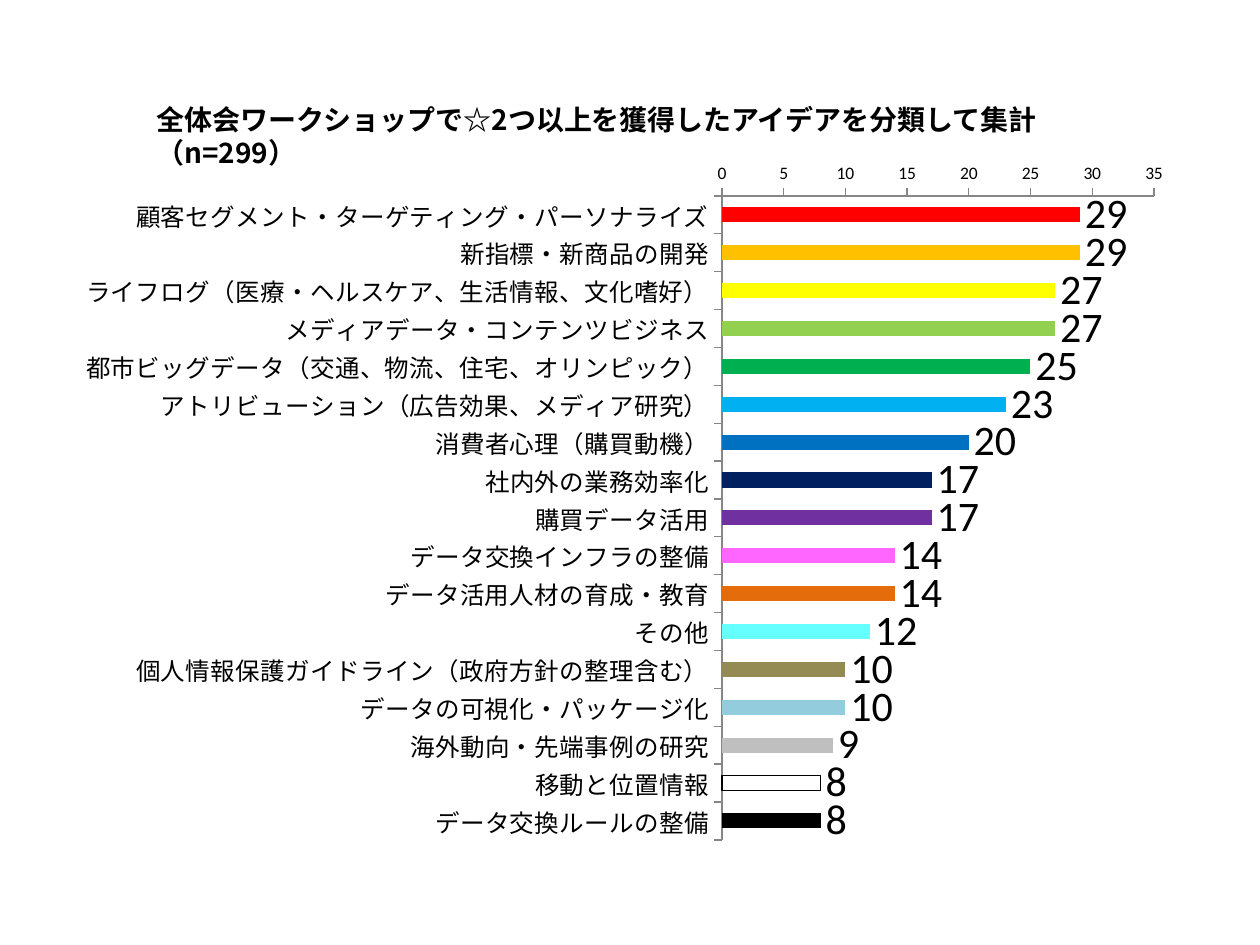
import dataclasses

import lxml.etree
import pptx
import pptx.chart.data
import pptx.dml.color
import pptx.enum.chart
import pptx.enum.text
import pptx.oxml
import pptx.oxml.ns
import pptx.util

RGB = pptx.dml.color.RGBColor
BLACK = RGB(0, 0, 0)
WHITE = RGB(255, 255, 255)
GREY = RGB(0x86, 0x86, 0x86)
RED = RGB(0xFF, 0, 0)
GOLD = RGB(0xFF, 0xC0, 0)
YELLOW = RGB(0xFF, 0xFF, 0)
LIME = RGB(0x92, 0xD0, 0x50)
GREEN = RGB(0, 0xB0, 0x50)
SKY = RGB(0, 0xB0, 0xF0)
BLUE = RGB(0, 0x70, 0xC0)
NAVY = RGB(0, 0x20, 0x60)
PURPLE = RGB(0x70, 0x30, 0xA0)
PINK = RGB(0xFF, 0x66, 0xFF)
ORANGE = RGB(0xE4, 0x6C, 0x0A)
CYAN = RGB(0x66, 0xFF, 0xFF)
OLIVE = RGB(0x94, 0x8A, 0x54)
PALE = RGB(0x93, 0xCD, 0xDD)
SILVER = RGB(0xBF, 0xBF, 0xBF)

LATIN = "Calibri"
CJK = "Noto Sans CJK JP"
DPI = 126


@dataclasses.dataclass(frozen=True)
class Box:
    left: int
    top: int
    width: int
    height: int

    def emu(self) -> tuple:
        return tuple(px(n) for n in dataclasses.astuple(self))


@dataclasses.dataclass(frozen=True)
class Bar:
    label: str
    count: int
    color: RGB
    edge: RGB | None = None


BARS = [
    Bar("顧客セグメント・ターゲティング・パーソナライズ", 29, RED),
    Bar("新指標・新商品の開発", 29, GOLD),
    Bar("ライフログ（医療・ヘルスケア、生活情報、文化嗜好）", 27, YELLOW),
    Bar("メディアデータ・コンテンツビジネス", 27, LIME),
    Bar("都市ビッグデータ（交通、物流、住宅、オリンピック）", 25, GREEN),
    Bar("アトリビューション（広告効果、メディア研究）", 23, SKY),
    Bar("消費者心理（購買動機）", 20, BLUE),
    Bar("社内外の業務効率化", 17, NAVY),
    Bar("購買データ活用", 17, PURPLE),
    Bar("データ交換インフラの整備", 14, PINK),
    Bar("データ活用人材の育成・教育", 14, ORANGE),
    Bar("その他", 12, CYAN),
    Bar("個人情報保護ガイドライン（政府方針の整理含む）", 10, OLIVE),
    Bar("データの可視化・パッケージ化", 10, PALE),
    Bar("海外動向・先端事例の研究", 9, SILVER),
    Bar("移動と位置情報", 8, WHITE, BLACK),
    Bar("データ交換ルールの整備", 8, BLACK),
]
FRAME = Box(64, 150, 1121, 704)
PLOT = Box(722, 196, 432, 644)
HEAD = Box(144, 96, 971, 47)


def px(n: int) -> int:
    return pptx.util.Emu(round(n * 914400 / DPI))


def style(font, size: int, face: str = LATIN, color: RGB = BLACK,
          bold: bool = False) -> None:
    """Set a font, with the same face for East Asian text."""
    font.size, font.name, font.bold = pptx.util.Pt(size), face, bold
    font.color.rgb = color
    props = font._element
    east = lxml.etree.Element(pptx.oxml.ns.qn("a:ea"), typeface=face)
    props.find(pptx.oxml.ns.qn("a:latin")).addnext(east)


def write(shape, text: str, **form) -> None:
    """Fill a shape with one left-aligned paragraph."""
    frame = shape.text_frame
    frame.word_wrap = True
    frame.auto_size = pptx.enum.text.MSO_AUTO_SIZE.NONE
    frame.vertical_anchor = pptx.enum.text.MSO_ANCHOR.TOP
    para = frame.paragraphs[0]
    para.alignment = pptx.enum.text.PP_ALIGN.LEFT
    run = para.add_run()
    run.text = text
    style(run.font, **form)


def place(chart, frame: Box, plot: Box) -> None:
    """Fix the inner plot area at a place within the chart frame."""
    parts = {
        "x": (plot.left - frame.left) / frame.width,
        "y": (plot.top - frame.top) / frame.height,
        "w": plot.width / frame.width,
        "h": plot.height / frame.height,
    }
    rows = '<c:layoutTarget val="inner"/>'
    rows += "".join(f'<c:{key}Mode val="edge"/>' for key in "xy")
    rows += "".join(f'<c:{key} val="{val:.4f}"/>' for key, val in parts.items())
    area = chart._chartSpace.chart.plotArea
    for old in area.findall(pptx.oxml.ns.qn("c:layout")):
        area.remove(old)
    area.insert(0, pptx.oxml.parse_xml(
        f'<c:layout {pptx.oxml.ns.nsdecls("c")}>'
        f"<c:manualLayout>{rows}</c:manualLayout></c:layout>"))


def set_axis(axis, size: int, face: str) -> None:
    axis.has_major_gridlines = False
    axis.major_tick_mark = pptx.enum.chart.XL_TICK_MARK.OUTSIDE
    axis.minor_tick_mark = pptx.enum.chart.XL_TICK_MARK.NONE
    axis.format.line.color.rgb = GREY
    axis.format.line.width = pptx.util.Pt(0.75)
    style(axis.tick_labels.font, size, face)


def add_bars(slide, bars: list[Bar], frame: Box, plot: Box) -> None:
    data = pptx.chart.data.CategoryChartData()
    data.categories = [bar.label for bar in bars]
    data.add_series("Series 1", [bar.count for bar in bars])
    kind = pptx.enum.chart.XL_CHART_TYPE.BAR_CLUSTERED
    chart = slide.shapes.add_chart(kind, *frame.emu(), data).chart
    chart.has_title = chart.has_legend = False
    style(chart.font, 10)
    place(chart, frame, plot)

    # Axes: first category at the top, scale along the upper edge
    set_axis(chart.category_axis, 14, CJK)
    chart.category_axis.reverse_order = True
    scale = chart.value_axis
    set_axis(scale, 10, LATIN)
    scale.minimum_scale, scale.maximum_scale, scale.major_unit = 0, 35, 5

    # Bars and their counts
    group = chart.plots[0]
    group.gap_width = 150
    group.vary_by_categories = False
    series = group.series[0]
    for i, bar in enumerate(bars):
        form = series.points[i].format
        form.fill.solid()
        form.fill.fore_color.rgb = bar.color
        if bar.edge is not None:
            form.line.color.rgb = bar.edge
            form.line.width = pptx.util.Pt(0.75)
    tags = series.data_labels
    tags.show_value = True
    tags.position = pptx.enum.chart.XL_LABEL_POSITION.OUTSIDE_END
    style(tags.font, 24)


def main() -> None:
    deck = pptx.Presentation()
    deck.slide_width, deck.slide_height = px(1260), px(945)
    slide = deck.slides.add_slide(deck.slide_layouts[5])

    # Title
    title = slide.shapes.title
    title.left, title.top, title.width, title.height = HEAD.emu()
    write(title, "全体会ワークショップで☆2つ以上を獲得したアイデアを分類して集計（n=299）",
          size=16, face=CJK, bold=True)

    # Chart
    add_bars(slide, BARS, FRAME, PLOT)
    deck.save("out.pptx")


if __name__ == "__main__":
    main()
